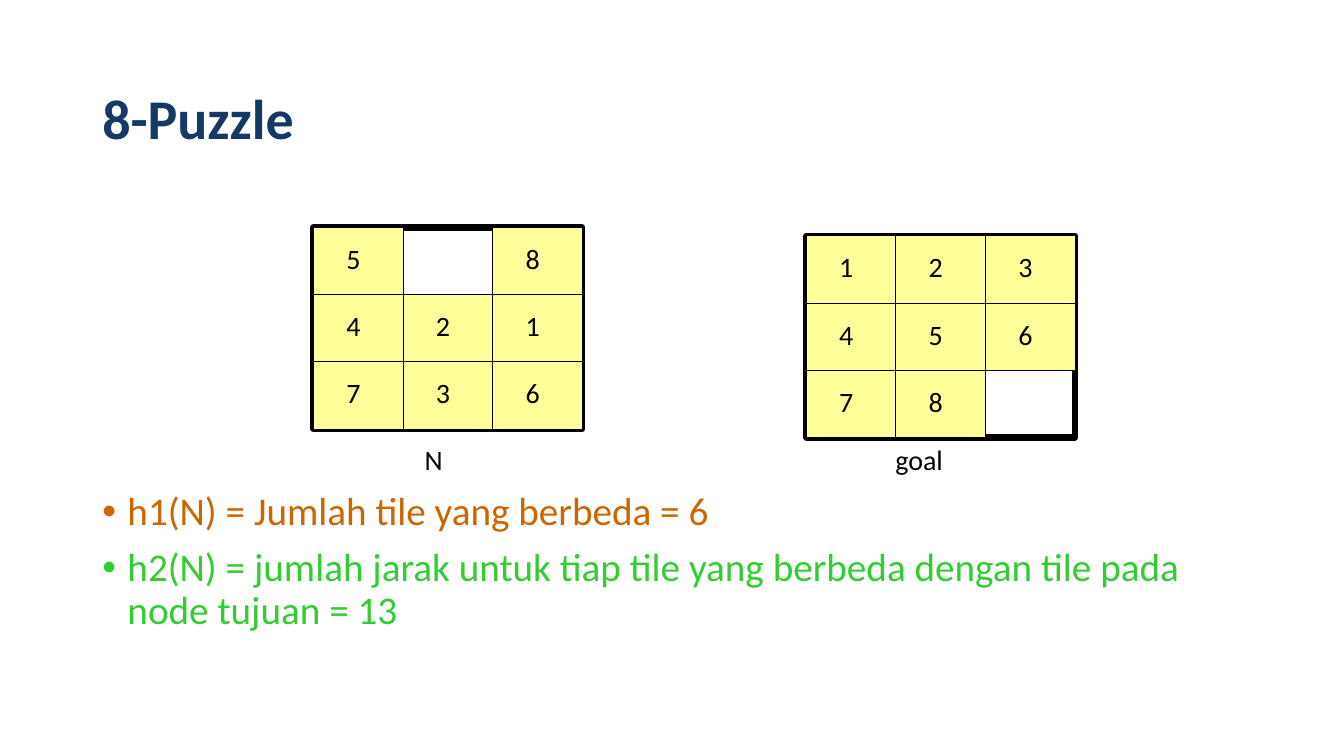
from dataclasses import dataclass

from lxml import etree
from pptx import Presentation
from pptx.dml.color import RGBColor
from pptx.enum import shapes, text
from pptx.oxml.ns import qn
from pptx.util import Pt


@dataclass(frozen=True)
class Theme:
    font: str = "Calibri"
    title: str = "163964"
    ink: str = "000000"
    tile: str = "FFFF99"
    first_rule: str = "CC6600"
    second_rule: str = "33CC33"
    title_size: float = 40
    body_size: float = 28
    label_size: float = 20
    frame_line: float = 4.5
    tile_line: float = 0.75


THEME = Theme()


def style_text(para, size, color, bold=False):
    for name, value in {"name": THEME.font, "size": Pt(size), "bold": bold}.items():
        setattr(para.font, name, value)
    para.font.color.rgb = RGBColor.from_string(color)


def add_text_frame(page, box, **settings):
    frame = page.shapes.add_textbox(*map(Pt, box)).text_frame
    for name, value in {"word_wrap": True, **settings}.items():
        setattr(frame, name, value)
    return frame


def add_title(page, box, words):
    frame = add_text_frame(page, box, vertical_anchor=text.MSO_ANCHOR.MIDDLE)
    para = frame.paragraphs[0]
    para.text = words
    para.line_spacing = 0.9
    style_text(para, THEME.title_size, THEME.title, bold=True)


def add_square(group, box, line_width, fill=None):
    square = group.shapes.add_shape(shapes.MSO_SHAPE.RECTANGLE, *map(Pt, box))
    square.shadow.inherit = False
    if fill:
        square.fill.solid()
        square.fill.fore_color.rgb = RGBColor.from_string(fill)
    else:
        square.fill.background()
    square.line.color.rgb = RGBColor.from_string(THEME.ink)
    square.line.width = Pt(line_width)
    return square


def add_board(page, box, rows):
    """Draw a framed puzzle; a space in a row leaves the frame bare."""
    left, top, width, height = box
    tile_width, tile_height = width / len(rows[0]), height / len(rows)
    group = page.shapes.add_group_shape()
    add_square(group, box, THEME.frame_line)
    insets = {"margin_left": 0, "margin_top": 0,
              "margin_right": Pt(7.2), "margin_bottom": Pt(4)}
    for row, digits in enumerate(rows):
        for column, digit in enumerate(digits):
            if digit == " ":
                continue
            place = (left + column * tile_width, top + row * tile_height,
                     tile_width, tile_height)
            frame = add_square(group, place, THEME.tile_line, THEME.tile).text_frame
            for name, value in insets.items():
                setattr(frame, name, value)
            frame.vertical_anchor = text.MSO_ANCHOR.MIDDLE
            para = frame.paragraphs[0]
            para.text = digit
            para.alignment = text.PP_ALIGN.CENTER
            style_text(para, THEME.label_size, THEME.ink)


def add_label(page, box, words):
    para = add_text_frame(page, box, word_wrap=False).paragraphs[0]
    para.text = words
    para.alignment = text.PP_ALIGN.CENTER
    style_text(para, THEME.label_size, THEME.ink)


def add_bullets(page, box, items):
    frame = add_text_frame(page, box)
    for index, (words, color) in enumerate(items):
        para = frame.add_paragraph() if index else frame.paragraphs[0]
        para.text = words
        para.line_spacing = 0.9
        para.space_before = Pt(10 if index else 0)
        properties = para._p.get_or_add_pPr()
        properties.set("marL", str(Pt(18)))
        properties.set("indent", str(-Pt(18)))
        etree.SubElement(properties, qn("a:buFont")).set("typeface", "Arial")
        etree.SubElement(properties, qn("a:buChar")).set("char", "•")
        style_text(para, THEME.body_size, color)


def build_puzzle_slide(deck):
    page = deck.slides.add_slide(deck.slide_layouts[6])
    add_title(page, (66, 40.25, 828, 93), "8-Puzzle")
    add_board(page, (224, 162.5, 192, 144), ["5 8", "421", "736"])
    add_board(page, (576, 168.5, 192, 144), ["123", "456", "78 "])
    add_label(page, (296, 312.5, 27.5, 31.5), "N")
    add_label(page, (632, 312.5, 49, 31.5), "goal")
    add_bullets(page, (66, 347.7, 828, 139), [
        ("h1(N) = Jumlah tile yang berbeda = 6", THEME.first_rule),
        ("h2(N) = jumlah jarak untuk tiap tile yang berbeda dengan tile "
         "pada node tujuan = 13", THEME.second_rule),
    ])


def main():
    deck = Presentation()
    deck.slide_width, deck.slide_height = Pt(960), Pt(540)
    build_puzzle_slide(deck)
    deck.save("out.pptx")


if __name__ == "__main__":
    main()
